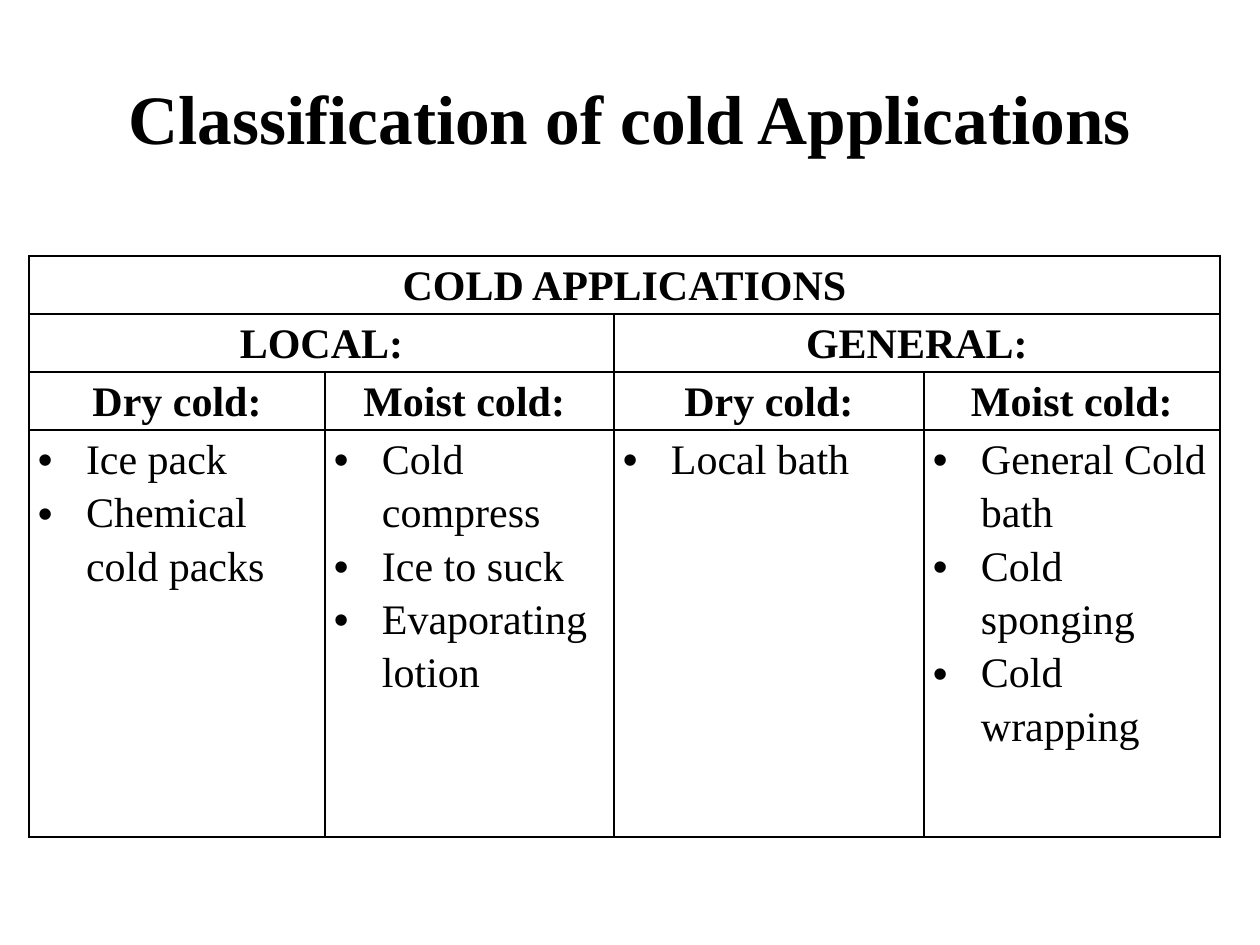
from pptx import Presentation
from pptx import util as u
from pptx.dml.color import RGBColor
from pptx.enum import text
from pptx.oxml.ns import qn
from lxml import etree

SCALE = 914400 / 126  # EMU per px
BLACK = RGBColor(0x00, 0x00, 0x00)
WHITE = RGBColor(0xFF, 0xFF, 0xFF)
FONT = "Times New Roman"
TITLE = dict(name=FONT, size=u.Pt(39.6), bold=True)
HEADING = dict(name=FONT, size=u.Pt(24), bold=True)
BODY = dict(HEADING, bold=False)

COL_WIDTHS = [296, 289, 310, 296]
ROW_HEIGHTS = [58, 58, 58, 407]
# Each heading: text, row, first column, last column
HEADINGS = [
    ("COLD APPLICATIONS", 0, 0, 3),
    ("LOCAL:", 1, 0, 1),
    ("GENERAL:", 1, 2, 3),
    ("Dry cold:", 2, 0, 0),
    ("Moist cold: ", 2, 1, 1),
    ("Dry cold:", 2, 2, 2),
    ("Moist cold:", 2, 3, 3),
]
METHODS = [
    ["Ice pack", "Chemical cold packs"],
    ["Cold compress", "Ice to suck", "Evaporating lotion"],
    ["Local bath"],
    ["General Cold bath", "Cold sponging", "Cold wrapping"],
]


def px(n):
    return u.Emu(round(n * SCALE))


def set_attrs(obj, values):
    for key, value in values.items():
        setattr(obj, key, value)


def write(p, words, fmt):
    r = p.add_run()
    r.text = words
    set_attrs(r.font, fmt)
    r.font.color.rgb = BLACK


def add_bullet(p):
    pPr = p._p.get_or_add_pPr()
    pPr.set("marL", str(px(48)))
    pPr.set("indent", str(-px(48)))
    etree.SubElement(pPr, qn("a:buFont"), typeface="Arial")
    etree.SubElement(pPr, qn("a:buChar"), char="•")


def add_borders(cell):
    tcPr = cell._tc.get_or_add_tcPr()
    for i, side in enumerate(("lnL", "lnR", "lnT", "lnB")):
        ln = etree.Element(qn(f"a:{side}"), w=str(u.Pt(1)))
        fill = etree.SubElement(ln, qn("a:solidFill"))
        etree.SubElement(fill, qn("a:srgbClr"), val=str(BLACK))
        tcPr.insert(i, ln)


def fill_cell(cell, lines, fmt, bulleted=False):
    tf = cell.text_frame
    for i, line in enumerate(lines):
        p = tf.add_paragraph() if i else tf.paragraphs[0]
        p.line_spacing = 1.15
        if bulleted:
            add_bullet(p)
        else:
            p.alignment = text.PP_ALIGN.CENTER
        write(p, line, fmt)


def add_title(slide, words):
    tf = slide.shapes.add_textbox(px(63), px(38), px(1134), px(157)).text_frame
    set_attrs(tf, dict(word_wrap=True, vertical_anchor=text.MSO_ANCHOR.MIDDLE))
    p = tf.paragraphs[0]
    p.alignment = text.PP_ALIGN.CENTER
    write(p, words, TITLE)


def add_grid(slide):
    table = slide.shapes.add_table(
        len(ROW_HEIGHTS), len(COL_WIDTHS), px(29), px(256),
        px(sum(COL_WIDTHS)), px(sum(ROW_HEIGHTS))).table
    set_attrs(table, dict(first_row=False, horz_banding=False))
    for col, width in zip(table.columns, COL_WIDTHS):
        col.width = px(width)
    for row, height in zip(table.rows, ROW_HEIGHTS):
        row.height = px(height)
    for cell in table.iter_cells():
        set_attrs(cell, dict(margin_left=px(9), margin_right=px(9),
                             margin_top=0, margin_bottom=0))
        cell.fill.solid()
        cell.fill.fore_color.rgb = WHITE
        add_borders(cell)
    return table


def main():
    prs = Presentation()
    set_attrs(prs, dict(slide_width=px(1260), slide_height=px(945)))
    slide = prs.slides.add_slide(prs.slide_layouts[6])

    add_title(slide, "Classification of cold Applications")
    table = add_grid(slide)

    # Headings, merged across the columns they cover
    for words, row, first, last in HEADINGS:
        cell = table.cell(row, first)
        if last > first:
            cell.merge(table.cell(row, last))
        fill_cell(cell, [words], HEADING)

    # Bulleted methods under each heading
    for col, methods in enumerate(METHODS):
        fill_cell(table.cell(3, col), methods, BODY, bulleted=True)

    prs.save("out.pptx")


if __name__ == "__main__":
    main()
